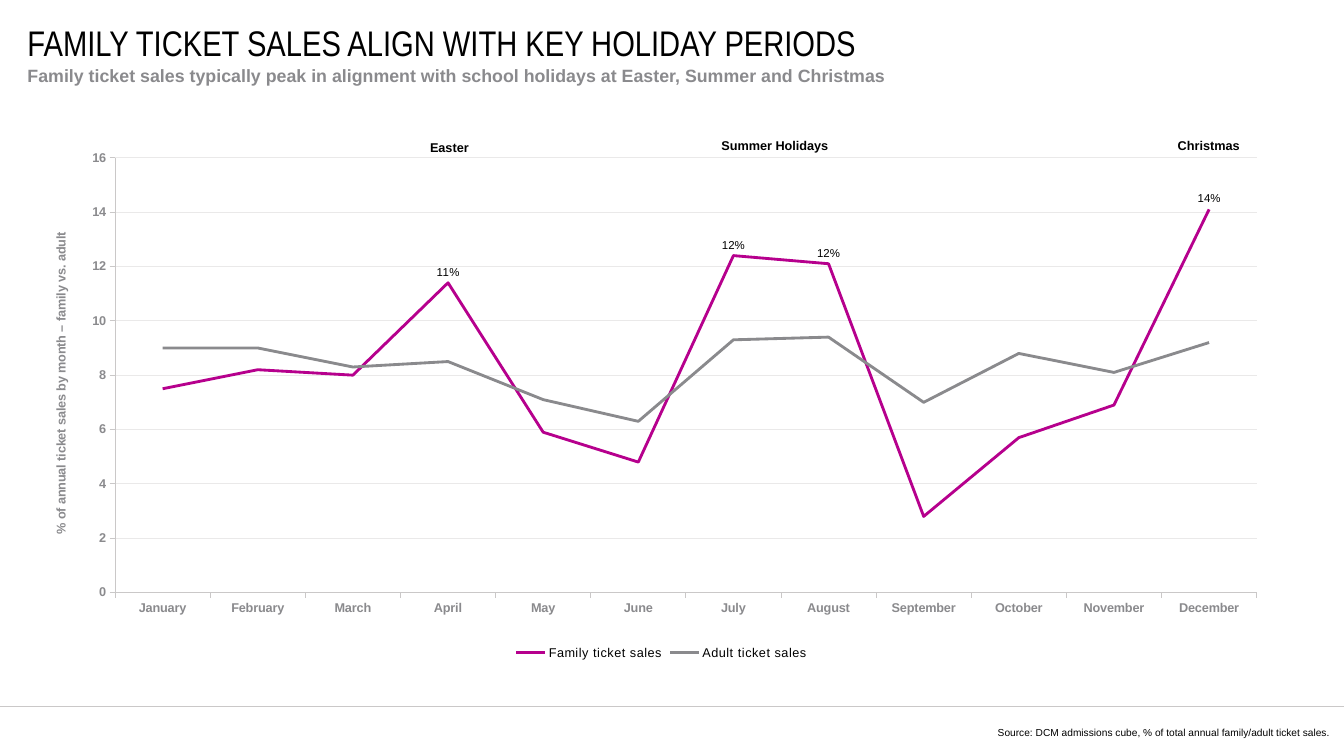
from dataclasses import dataclass

from lxml.etree import SubElement
from pptx import Presentation
from pptx.chart.chart import Chart
from pptx.chart.data import CategoryChartData
from pptx.dml.color import RGBColor
from pptx.enum.chart import XL_CHART_TYPE, XL_LABEL_POSITION, XL_LEGEND_POSITION, XL_TICK_MARK
from pptx.enum.shapes import MSO_CONNECTOR
from pptx.enum.text import MSO_ANCHOR, MSO_AUTO_SIZE, PP_ALIGN
from pptx.oxml import parse_xml
from pptx.oxml.ns import nsdecls, qn
from pptx.slide import Slide
from pptx.text.text import Font, TextFrame
from pptx.util import Pt

BLACK = RGBColor(0x00, 0x00, 0x00)
GREY = RGBColor(0x8A, 0x8A, 0x8D)
MAGENTA = RGBColor(0xB6, 0x00, 0x8D)
RULE_GREY = RGBColor(0xCA, 0xC8, 0xC8)
GRID_GREY = RGBColor(0xEA, 0xE9, 0xE9)

SLIDE_WIDTH, SLIDE_HEIGHT = 1058.4, 595.44
RULE_TOP = 556.5
MONTHS = ("January", "February", "March", "April", "May", "June", "July",
          "August", "September", "October", "November", "December")


@dataclass(frozen=True)
class Label:
    text: str
    left: float
    top: float
    width: float
    height: float
    size: float = 10
    bold: bool = True
    color: RGBColor = BLACK
    alignment: PP_ALIGN = PP_ALIGN.CENTER
    anchor: MSO_ANCHOR = MSO_ANCHOR.TOP
    margin_x: float = 7.2
    margin_y: float = 3.6
    line_spacing: float | None = None
    font_name: str = "Arial"
    wrap: bool = True


@dataclass(frozen=True)
class SalesSeries:
    name: str
    values: tuple[float, ...]
    color: RGBColor
    peak_labels: dict[str, str]


TITLE = Label("FAMILY TICKET SALES ALIGN WITH KEY HOLIDAY PERIODS", 21.6, 21.6, 977.8, 23,
              size=28, bold=False, alignment=PP_ALIGN.LEFT, anchor=MSO_ANCHOR.MIDDLE,
              margin_x=0, margin_y=0, font_name="Arial Narrow", wrap=False)
LABELS = (
    Label("Family ticket sales typically peak in alignment with school holidays at "
          "Easter, Summer and Christmas", 21.6, 52.6, 978.5, 34.6, size=14, color=GREY,
          alignment=PP_ALIGN.LEFT, margin_x=0, margin_y=0, line_spacing=15),
    Label("Source: DCM admissions cube, % of total annual family/adult ticket sales.",
          719.3, 572.4, 328.3, 9.4, size=8, bold=False, alignment=PP_ALIGN.RIGHT,
          anchor=MSO_ANCHOR.MIDDLE, margin_x=0, margin_y=0),
    Label("Easter", 328.3, 106.6, 51.1, 19.4),
    Label("Summer Holidays", 552.2, 105.1, 115.9, 19.4),
    Label("Christmas", 914.4, 105.1, 74.9, 19.4),
)
SALES = (
    SalesSeries("Family ticket sales",
                (7.5, 8.2, 8, 11.4, 5.9, 4.8, 12.4, 12.1, 2.8, 5.7, 6.9, 14.1), MAGENTA,
                {"April": "11%", "July": "12%", "August": "12%", "December": "14%"}),
    SalesSeries("Adult ticket sales",
                (9, 9, 8.3, 8.5, 7.1, 6.3, 9.3, 9.4, 7, 8.8, 8.1, 9.2), GREY, {}),
)


def style_font(font: Font, size: float, color: RGBColor, bold: bool = False,
               name: str = "Arial") -> None:
    font.name = name
    font.size = Pt(size)
    font.bold = bold
    font.color.rgb = color


def fill_text(frame: TextFrame, label: Label) -> None:
    frame.auto_size = MSO_AUTO_SIZE.NONE
    frame.word_wrap = label.wrap
    frame.vertical_anchor = label.anchor
    frame.margin_left = frame.margin_right = Pt(label.margin_x)
    frame.margin_top = frame.margin_bottom = Pt(label.margin_y)
    paragraph = frame.paragraphs[0]
    paragraph.text = label.text
    paragraph.alignment = label.alignment
    if label.line_spacing is not None:
        paragraph.line_spacing = Pt(label.line_spacing)
    style_font(paragraph.font, label.size, label.color, label.bold, label.font_name)


def add_title(slide: Slide) -> None:
    title = slide.shapes.title
    title.left, title.top = Pt(TITLE.left), Pt(TITLE.top)
    title.width, title.height = Pt(TITLE.width), Pt(TITLE.height)
    fill_text(title.text_frame, TITLE)


def add_label(slide: Slide, label: Label) -> None:
    box = slide.shapes.add_textbox(Pt(label.left), Pt(label.top),
                                   Pt(label.width), Pt(label.height))
    fill_text(box.text_frame, label)


def add_footer_rule(slide: Slide) -> None:
    rule = slide.shapes.add_connector(MSO_CONNECTOR.STRAIGHT, Pt(0), Pt(RULE_TOP),
                                      Pt(SLIDE_WIDTH), Pt(RULE_TOP))
    rule.line.color.rgb = RULE_GREY
    rule.line.width = Pt(0.5)
    SubElement(rule._element.spPr, qn("a:effectLst"))


def place_plot(chart: Chart, x: float, y: float, width: float, height: float) -> None:
    """Fix the inner plot area, in fractions of the chart frame."""
    plot_area = chart._chartSpace.chart.plotArea
    for layout in plot_area.findall(qn("c:layout")):
        plot_area.remove(layout)
    plot_area.insert(0, parse_xml(
        f'<c:layout {nsdecls("c")}><c:manualLayout><c:layoutTarget val="inner"/>'
        '<c:xMode val="edge"/><c:yMode val="edge"/>'
        f'<c:x val="{x}"/><c:y val="{y}"/><c:w val="{width}"/><c:h val="{height}"/>'
        '</c:manualLayout></c:layout>'))


def style_axes(chart: Chart) -> None:
    for axis in (chart.category_axis, chart.value_axis):
        axis.major_tick_mark = XL_TICK_MARK.OUTSIDE
        axis.minor_tick_mark = XL_TICK_MARK.NONE
        axis.format.line.color.rgb = RULE_GREY
        axis.format.line.width = Pt(0.75)
        style_font(axis.tick_labels.font, 10, GREY, bold=True)
    value_axis = chart.value_axis
    value_axis.minimum_scale, value_axis.maximum_scale = 0, 16
    value_axis.major_unit = 2
    value_axis.tick_labels.number_format = "0"
    value_axis.tick_labels.number_format_is_linked = False
    value_axis.major_gridlines.format.line.color.rgb = GRID_GREY
    value_axis.major_gridlines.format.line.width = Pt(0.75)
    paragraph = value_axis.axis_title.text_frame.paragraphs[0]
    paragraph.text = "% of annual ticket sales by month – family vs. adult"
    style_font(paragraph.font, 10, GREY, bold=True)


def add_sales_chart(slide: Slide) -> None:
    data = CategoryChartData(number_format="0.0")
    data.categories = MONTHS
    for sales in SALES:
        data.add_series(sales.name, sales.values)
    chart = slide.shapes.add_chart(XL_CHART_TYPE.LINE, Pt(39.6), Pt(114.5),
                                   Pt(962.6), Pt(408.2), data).chart
    style_font(chart.font, 10, BLACK)
    chart.has_title = False
    chart.has_legend = True
    chart.legend.position = XL_LEGEND_POSITION.BOTTOM
    chart.legend.include_in_layout = False
    style_font(chart.legend.font, 10, BLACK)
    chart.legend._element.find(f".//{qn('a:defRPr')}").set("spc", "50")
    place_plot(chart, 0.053, 0.024, 0.934, 0.839)
    style_axes(chart)
    plot = chart.plots[0]
    plot.vary_by_categories = False
    for series, sales in zip(plot.series, SALES):
        series.smooth = False
        series.format.line.color.rgb = sales.color
        series.format.line.width = Pt(2.25)
        for month, text in sales.peak_labels.items():
            data_label = series.points[MONTHS.index(month)].data_label
            paragraph = data_label.text_frame.paragraphs[0]
            paragraph.text = text
            style_font(paragraph.runs[0].font, 9, BLACK)
            data_label.position = XL_LABEL_POSITION.ABOVE


def main() -> None:
    presentation = Presentation()
    presentation.slide_width = Pt(SLIDE_WIDTH)
    presentation.slide_height = Pt(SLIDE_HEIGHT)
    slide = presentation.slides.add_slide(presentation.slide_layouts.get_by_name("Title Only"))
    add_footer_rule(slide)
    add_title(slide)
    add_sales_chart(slide)
    for label in LABELS:
        add_label(slide, label)
    presentation.save("out.pptx")


if __name__ == "__main__":
    main()
